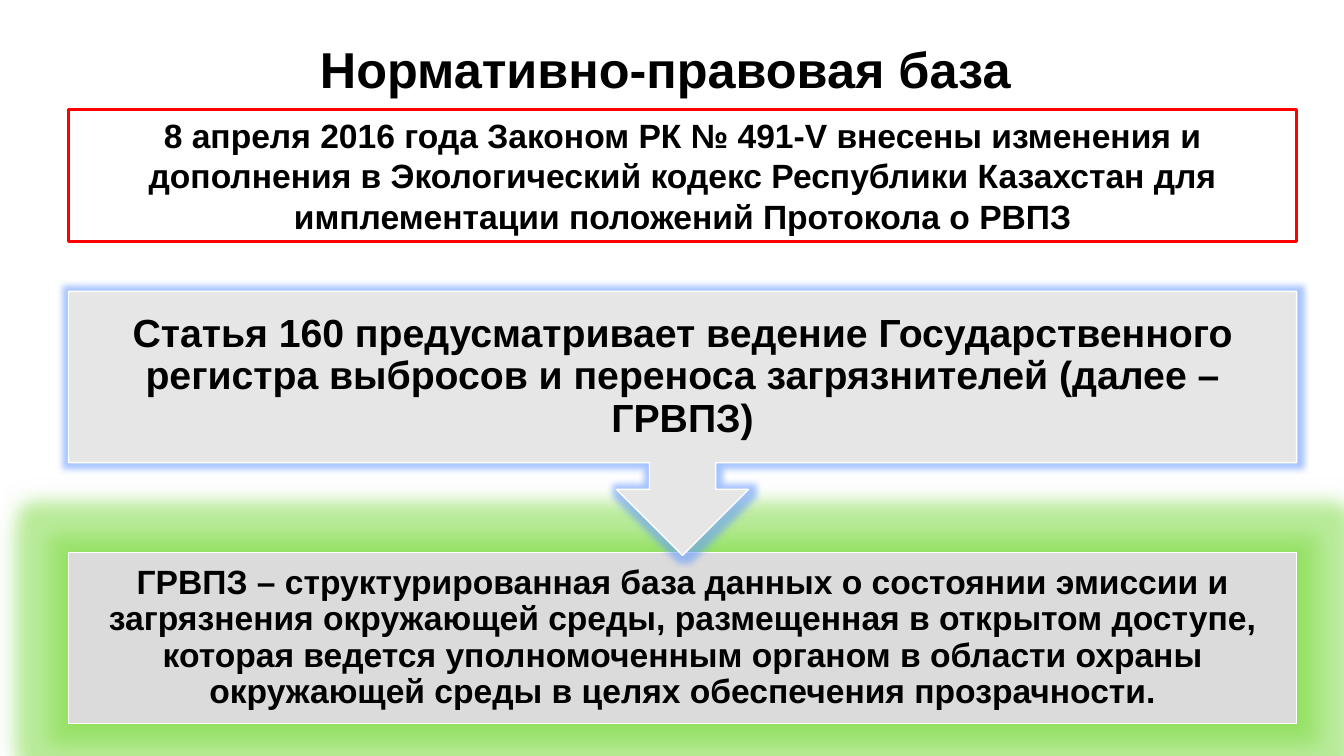
import pptx
import pptx.dml.color
import pptx.enum.shapes
import pptx.enum.text
import pptx.oxml.ns
import pptx.util
from lxml import etree

PX = 9144  # 100 px to the inch
BLACK = "000000"
SHAPES = pptx.enum.shapes.MSO_SHAPE
ANCHOR = pptx.enum.text.MSO_ANCHOR
BLUE_HALO = [("glow", "rad", 11, "6B9DFF", 60)]
GREEN_HALO = [("glow", "rad", 36, "7FDB45", 50),
              ("outerShdw", "blurRad", 11, "7FDB45", 50)]


def colour(value):
    return pptx.dml.color.RGBColor.from_string(value)


def lengths(*values):
    return [pptx.util.Emu(value * PX) for value in values]


def write(part, text, size, inset=(10, 5), anchor=ANCHOR.TOP, spacing=None):
    """Put one bold centred paragraph into a part."""
    frame = part.text_frame
    frame.word_wrap = True
    frame.vertical_anchor = anchor
    frame.margin_left, frame.margin_top = lengths(*inset)
    frame.margin_right, frame.margin_bottom = lengths(*inset)
    paragraph = frame.paragraphs[0]
    paragraph.text = text
    paragraph.alignment = pptx.enum.text.PP_ALIGN.CENTER
    if spacing:
        paragraph.line_spacing = spacing
    paragraph.font.name = "Arial"
    paragraph.font.size = pptx.util.Pt(size)
    paragraph.font.bold = True
    paragraph.font.color.rgb = colour(BLACK)


def add_halo(part, effects):
    """Fill the part's effect list with soft coloured edges."""
    qn = pptx.oxml.ns.qn
    effect_list = part._element.spPr.find(qn("a:effectLst"))
    for tag, radius_name, radius, tint, opacity in effects:
        effect = etree.SubElement(effect_list, qn("a:" + tag))
        effect.set(radius_name, str(radius * PX))
        tint_node = etree.SubElement(effect, qn("a:srgbClr"), val=tint)
        etree.SubElement(tint_node, qn("a:alpha"), val=str(opacity * 1000))


def add_panel(slide, kind, box, fill, line, line_width):
    panel = slide.shapes.add_shape(kind, *lengths(*box))
    panel.shadow.inherit = False
    if fill:
        panel.fill.solid()
        panel.fill.fore_color.rgb = colour(fill)
    else:
        panel.fill.background()
    panel.line.color.rgb = colour(line)
    panel.line.width = pptx.util.Pt(line_width)
    return panel


def add_title(slide, box):
    title = slide.shapes.add_textbox(*lengths(*box))
    write(title, "Нормативно-правовая база", 36)


def add_law_notice(slide, box):
    notice = add_panel(slide, SHAPES.RECTANGLE, box, None, "FF0000", 2.25)
    write(notice, "8 апреля 2016 года Законом РК № 491-V внесены изменения и "
          "дополнения в Экологический кодекс Республики Казахстан для "
          "имплементации положений Протокола о РВПЗ", 24)


def add_register_flow(slide, box):
    """Article callout pointing down at the definition of the register."""
    left, top, width, height = box
    step_height = 170
    callout_height = 262

    definition = add_panel(
        slide, SHAPES.RECTANGLE,
        (left, top + height - step_height, width, step_height),
        "DBDBDB", "FFFFFF", 1)
    add_halo(definition, GREEN_HALO)
    write(definition, "ГРВПЗ – структурированная база данных о состоянии "
          "эмиссии и загрязнения окружающей среды, размещенная в открытом "
          "доступе, которая ведется уполномоченным органом в области охраны "
          "окружающей среды в целях обеспечения прозрачности.",
          24, (19, 19), ANCHOR.MIDDLE, 0.9)

    article = add_panel(slide, SHAPES.DOWN_ARROW_CALLOUT,
                        (left, top, width, callout_height),
                        "E7E6E6", "FFFFFF", 1)
    article.adjustments[3] = step_height / callout_height
    add_halo(article, BLUE_HALO)
    write(article, "Статья 160 предусматривает ведение Государственного "
          "регистра выбросов и переноса загрязнителей (далее – ГРВПЗ)",
          28, (22, 22), ANCHOR.MIDDLE, 0.9)


def main():
    deck = pptx.Presentation()
    deck.slide_width, deck.slide_height = lengths(1333, 750)
    slide = deck.slides.add_slide(deck.slide_layouts[6])
    add_title(slide, (133, 33, 1054, 76))
    add_law_notice(slide, (68, 109, 1218, 131))
    add_register_flow(slide, (68, 289, 1218, 429))
    deck.save("out.pptx")


if __name__ == "__main__":
    main()
